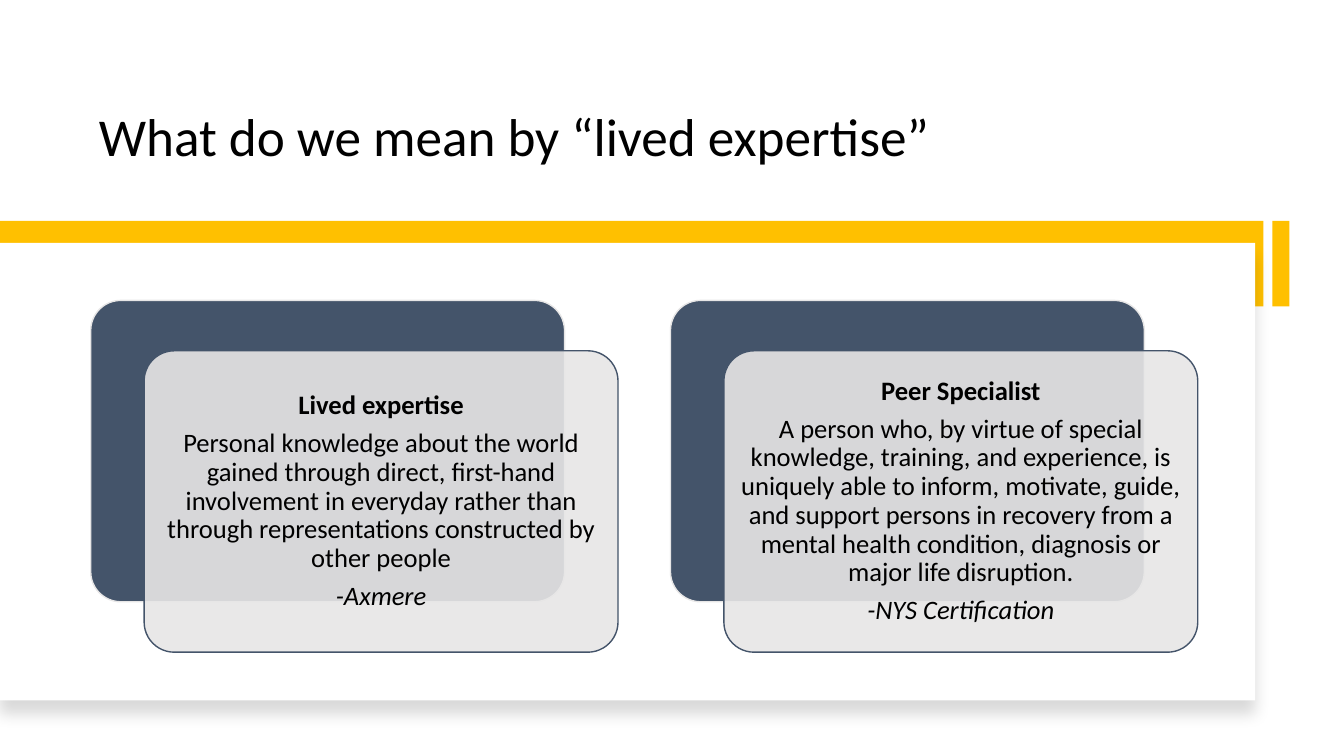
from dataclasses import dataclass

from lxml import etree
from pptx import Presentation
from pptx.dml.color import RGBColor
from pptx.enum.shapes import MSO_SHAPE
from pptx.enum.text import MSO_ANCHOR, MSO_AUTO_SIZE, PP_ALIGN
from pptx.oxml.ns import qn
from pptx.shapes.autoshape import Shape
from pptx.slide import Slide
from pptx.text.text import TextFrame
from pptx.util import Emu, Pt

RECT, ROUNDED = MSO_SHAPE.RECTANGLE, MSO_SHAPE.ROUNDED_RECTANGLE
LEFT, CENTER = PP_ALIGN.LEFT, PP_ALIGN.CENTER
BOTTOM, MIDDLE = MSO_ANCHOR.BOTTOM, MSO_ANCHOR.MIDDLE
NO_AUTOFIT = MSO_AUTO_SIZE.NONE

BLACK = RGBColor(0x00, 0x00, 0x00)
WHITE = RGBColor(0xFF, 0xFF, 0xFF)
GOLD = RGBColor(0xFF, 0xC0, 0x00)
SLATE = RGBColor(0x44, 0x54, 0x6A)
LIGHT_GRAY = RGBColor(0xE7, 0xE6, 0xE6)

FONT = "Calibri"
EMU_PER_PX = 9144  # 100 px to the inch

CARD_TOP, CARD_WIDTH, CARD_HEIGHT = 298, 470, 299
FIRST_CARD_LEFT, CARD_PITCH = 90, 575
FRONT_SHIFT_X, FRONT_SHIFT_Y = 53, 50
CARD_INSET = 8


@dataclass(frozen=True)
class Box:
    left: int
    top: int
    width: int
    height: int


@dataclass(frozen=True)
class Definition:
    term: str
    meaning: str
    origin: str


DEFINITIONS = [
    Definition(
        "Lived expertise",
        "Personal knowledge about the world gained through direct, first-hand "
        "involvement in everyday rather than through representations "
        "constructed by other people",
        "-Axmere",
    ),
    Definition(
        "Peer Specialist",
        "A person who, by virtue of special knowledge, training, and experience, "
        "is uniquely able to inform, motivate, guide, and support persons in "
        "recovery from a mental health condition, diagnosis or major life "
        "disruption.",
        "-NYS Certification",
    ),
]


def px(length: int) -> Emu:
    return Emu(length * EMU_PER_PX)


def add_panel(slide: Slide, kind: MSO_SHAPE, box: Box, fill: RGBColor,
              line: RGBColor | None = None) -> Shape:
    panel = slide.shapes.add_shape(
        kind, px(box.left), px(box.top), px(box.width), px(box.height))
    panel.shadow.inherit = False
    panel.fill.solid()
    panel.fill.fore_color.rgb = fill
    if line is None:
        panel.line.fill.background()
    else:
        panel.line.color.rgb = line
        panel.line.width = Pt(1)
    if kind == ROUNDED:
        panel.adjustments[0] = 0.1
    return panel


def set_opacity(panel: Shape, percent: int) -> None:
    color = panel.fill._xPr.find(qn("a:solidFill"))[0]
    etree.SubElement(color, qn("a:alpha"), val=str(percent * 1000))


def add_drop_shadow(panel: Shape) -> None:
    effects = panel._element.spPr.find(qn("a:effectLst"))
    shadow = etree.SubElement(
        effects, qn("a:outerShdw"), blurRad=str(Pt(11)), dist=str(Pt(10)),
        dir=str(90 * 60000), algn="t", rotWithShape="0")
    color = etree.SubElement(shadow, qn("a:srgbClr"), val=str(BLACK))
    etree.SubElement(color, qn("a:alpha"), val="15000")


def write_paragraph(frame: TextFrame, text: str, *, size: int,
                    align: PP_ALIGN, first: bool = False, bold: bool = False,
                    italic: bool = False, space_after: float = 0) -> None:
    paragraph = frame.paragraphs[0] if first else frame.add_paragraph()
    paragraph.alignment = align
    paragraph.line_spacing = 0.9
    paragraph.space_before = Pt(0)
    paragraph.space_after = Pt(space_after)
    run = paragraph.add_run()
    run.text = text
    run.font.name = FONT
    run.font.size = Pt(size)
    run.font.bold = bold
    run.font.italic = italic
    run.font.color.rgb = BLACK


def add_title(slide: Slide, text: str) -> None:
    title = slide.shapes.title
    title.left, title.top = px(88), px(42)
    title.width, title.height = px(1010), px(130)
    frame = title.text_frame
    frame.auto_size = NO_AUTOFIT
    frame.vertical_anchor = BOTTOM
    write_paragraph(frame, text, size=38, align=LEFT, first=True)


def add_backdrop(slide: Slide) -> None:
    add_panel(slide, RECT, Box(1262, 219, 17, 85), GOLD)
    add_panel(slide, RECT, Box(0, 219, 1253, 85), GOLD)
    content_sheet = add_panel(slide, RECT, Box(0, 241, 1245, 454), WHITE)
    add_drop_shadow(content_sheet)


def add_definition_card(slide: Slide, left: int, definition: Definition) -> None:
    add_panel(slide, ROUNDED, Box(left, CARD_TOP, CARD_WIDTH, CARD_HEIGHT),
              SLATE, LIGHT_GRAY)
    front = add_panel(
        slide, ROUNDED,
        Box(left + FRONT_SHIFT_X, CARD_TOP + FRONT_SHIFT_Y,
            CARD_WIDTH, CARD_HEIGHT),
        LIGHT_GRAY, SLATE)
    set_opacity(front, 90)

    frame = front.text_frame
    frame.word_wrap = True
    frame.vertical_anchor = MIDDLE
    frame.margin_left = frame.margin_right = px(CARD_INSET)
    frame.margin_top = frame.margin_bottom = px(CARD_INSET)
    layout = {"size": 19, "align": CENTER, "space_after": 6.65}
    write_paragraph(frame, definition.term, first=True, bold=True, **layout)
    write_paragraph(frame, definition.meaning, **layout)
    write_paragraph(frame, definition.origin, italic=True, **layout)


def main() -> None:
    deck = Presentation()
    deck.slide_width, deck.slide_height = px(1333), px(750)
    title_only = deck.slide_layouts[5]
    slide = deck.slides.add_slide(title_only)
    add_title(slide, "What do we mean by “lived expertise”")
    add_backdrop(slide)
    for index, definition in enumerate(DEFINITIONS):
        add_definition_card(
            slide, FIRST_CARD_LEFT + index * CARD_PITCH, definition)
    deck.save("out.pptx")


if __name__ == "__main__":
    main()
